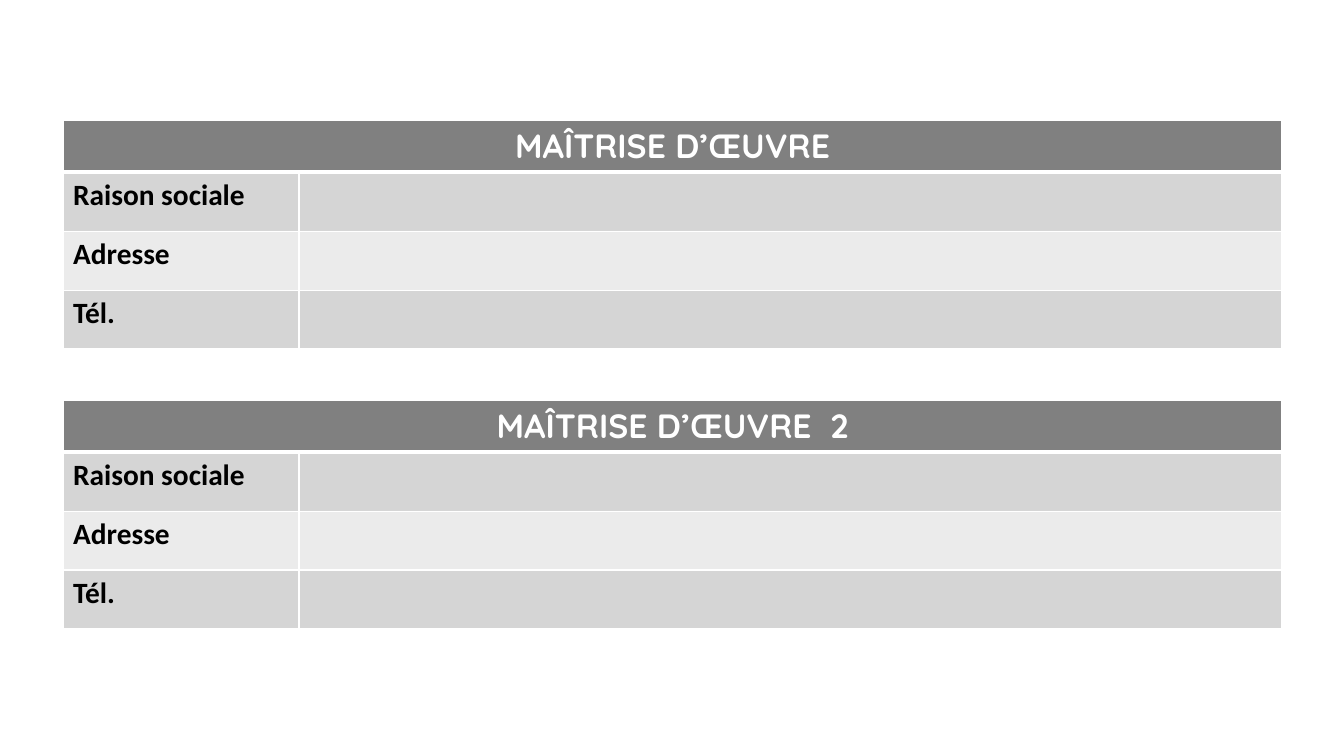
from lxml import etree
from pptx import Presentation
from pptx.dml.color import RGBColor
from pptx.enum.text import PP_ALIGN
from pptx.oxml.ns import qn
from pptx.util import Emu, Pt

CENTER, LEFT = PP_ALIGN.CENTER, PP_ALIGN.LEFT
WHITE = RGBColor(0xFF, 0xFF, 0xFF)
BLACK = RGBColor(0x00, 0x00, 0x00)
HEADER_GREY = RGBColor(0x80, 0x80, 0x80)
DARK_BAND = RGBColor(0xD5, 0xD5, 0xD5)
LIGHT_BAND = RGBColor(0xEB, 0xEB, 0xEB)

TABLE_LEFT = 63
COLUMN_WIDTHS = [236, 983]
ROW_HEIGHTS = [52, 59, 59, 59]
LABELS = ["Raison sociale", "Adresse", "Tél."]
TABLES = [(120, "MAÎTRISE D’ŒUVRE"), (400, "MAÎTRISE D’ŒUVRE  2")]

HEADER_FONT = {"name": "Quicksand", "size": Pt(24), "bold": True}
LABEL_FONT = {"name": "Calibri", "size": Pt(21), "bold": True}


def px(length):
    return Emu(round(length * 914400 / 100.8))


def format_cell(cell, fill, bottom_width):
    properties = cell._tc.get_or_add_tcPr()
    for side, width in (("L", 1), ("R", 1), ("T", 1), ("B", bottom_width)):
        line = etree.SubElement(properties, qn("a:ln" + side), w=str(Pt(width)))
        line_fill = etree.SubElement(line, qn("a:solidFill"))
        etree.SubElement(line_fill, qn("a:srgbClr"), val=str(WHITE))
    cell.fill.solid()
    cell.fill.fore_color.rgb = fill


deck = Presentation()
deck.slide_width, deck.slide_height = px(1344), px(756)
page = deck.slides.add_slide(deck.slide_layouts[6])

for top, heading in TABLES:
    frame = page.shapes.add_table(
        len(ROW_HEIGHTS), len(COLUMN_WIDTHS), px(TABLE_LEFT), px(top),
        px(sum(COLUMN_WIDTHS)), px(sum(ROW_HEIGHTS)))
    table = frame.table
    for column, width in zip(table.columns, COLUMN_WIDTHS):
        column.width = px(width)
    table.cell(0, 0).merge(table.cell(0, 1))

    for index, text in enumerate([heading] + LABELS):
        table.rows[index].height = px(ROW_HEIGHTS[index])
        if index == 0:
            fill, bottom_width = HEADER_GREY, 3
            alignment, color, font = CENTER, WHITE, HEADER_FONT
        else:
            fill, bottom_width = (DARK_BAND if index % 2 else LIGHT_BAND), 1
            alignment, color, font = LEFT, BLACK, LABEL_FONT
        for cell in table.rows[index].cells:
            format_cell(cell, fill, bottom_width)

        para = table.cell(index, 0).text_frame.paragraphs[0]
        para.alignment = alignment
        span = para.add_run()
        span.text = text
        span.font.color.rgb = color
        for name, value in font.items():
            setattr(span.font, name, value)

deck.save("out.pptx")
